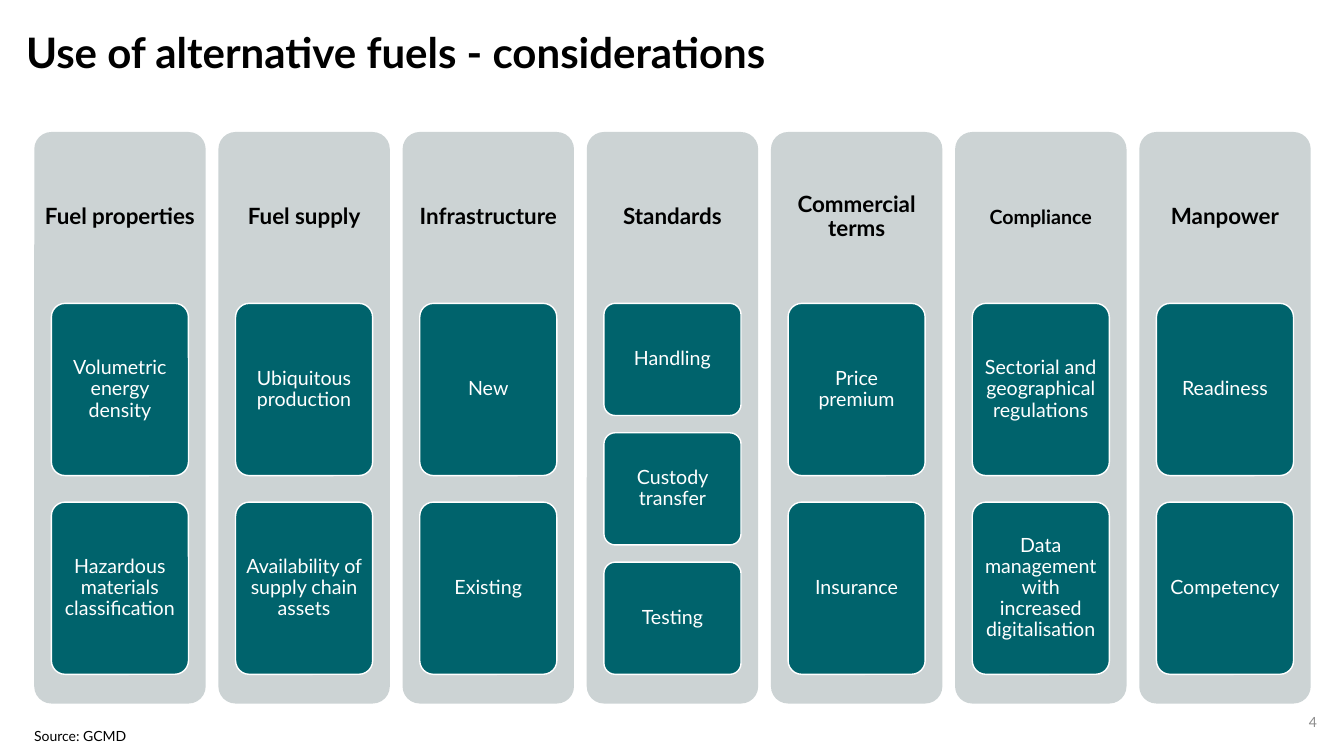
from dataclasses import dataclass

from pptx import Presentation
from pptx import util as u
from pptx.dml.color import RGBColor
from pptx.enum import shapes, text

TITLE = "Use of alternative fuels - considerations"
SOURCE = "Source: GCMD"
PAGE_NUMBER = "4"
COLUMNS = [
    ("Fuel properties", ["Volumetric energy density", "Hazardous materials classification"]),
    ("Fuel supply", ["Ubiquitous production", "Availability of supply chain assets"]),
    ("Infrastructure", ["New", "Existing"]),
    ("Standards", ["Handling", "Custody transfer", "Testing"]),
    ("Commercial terms", ["Price premium", "Insurance"]),
    ("Compliance", ["Sectorial and geographical regulations",
                    "Data management with increased digitalisation"]),
    ("Manpower", ["Readiness", "Competency"]),
]
SMALL_HEADINGS = {"Compliance"}


@dataclass(frozen=True)
class Theme:
    font: str = "Lato"
    ink: str = "000000"
    grey: str = "8C8C8C"
    panel: str = "CCD3D4"
    card: str = "00636C"
    white: str = "FFFFFF"
    title_size: int = 30
    heading_size: int = 16
    card_size: int = 14
    note_size: int = 10


THEME = Theme()

PANEL_LEFT, PANEL_TOP = 0.34, 1.31
PANEL_WIDTH, PANEL_HEIGHT = 1.7, 5.67
LAST_PANEL_LEFT = 11.3
HEADING_HEIGHT = 1.7
CARD_WIDTH = 1.36
CARDS_TOP, CARDS_HEIGHT = 3.01, 3.68
GAP_RATIO = 2 / 13


def write(shape, words, size, color=THEME.ink, bold=False, align=text.PP_ALIGN.LEFT,
          anchor=text.MSO_ANCHOR.MIDDLE, insets=(0.1, 0.05), spacing=0.9, wrap=True):
    frame = shape.text_frame
    frame.word_wrap = wrap
    frame.vertical_anchor = anchor
    frame.margin_left = frame.margin_right = u.Inches(insets[0])
    frame.margin_top = frame.margin_bottom = u.Inches(insets[1])
    para = frame.paragraphs[0]
    para.alignment = align
    para.line_spacing = spacing
    span = para.add_run()
    span.text = words
    span.font.name = THEME.font
    span.font.size = u.Pt(size)
    span.font.bold = bold
    span.font.color.rgb = RGBColor.from_string(color)


def add_box(page, *place):
    return page.shapes.add_textbox(*map(u.Inches, place))


def add_rounded(page, place, fill, outline=None):
    shape = page.shapes.add_shape(shapes.MSO_SHAPE.ROUNDED_RECTANGLE, *map(u.Inches, place))
    shape.adjustments[0] = 0.1
    shape.shadow.inherit = False
    shape.fill.solid()
    shape.fill.fore_color.rgb = RGBColor.from_string(fill)
    if outline:
        shape.line.color.rgb = RGBColor.from_string(outline)
        shape.line.width = u.Pt(1)
    else:
        shape.line.fill.background()
    return shape


def add_column(page, left, heading, cards):
    add_rounded(page, (left, PANEL_TOP, PANEL_WIDTH, PANEL_HEIGHT), THEME.panel)
    size = THEME.card_size if heading in SMALL_HEADINGS else THEME.heading_size
    write(add_box(page, left, PANEL_TOP, PANEL_WIDTH, HEADING_HEIGHT), heading, size,
          bold=True, align=text.PP_ALIGN.CENTER, insets=(0.07, 0.07))
    count = len(cards)
    height = CARDS_HEIGHT / (count + (count - 1) * GAP_RATIO)
    card_left = left + (PANEL_WIDTH - CARD_WIDTH) / 2
    for row, words in enumerate(cards):
        top = CARDS_TOP + row * height * (1 + GAP_RATIO)
        card = add_rounded(page, (card_left, top, CARD_WIDTH, height), THEME.card, THEME.white)
        write(card, words, THEME.card_size, color=THEME.white,
              align=text.PP_ALIGN.CENTER, insets=(0.04, 0.03))


def main():
    deck = Presentation()
    deck.slide_width, deck.slide_height = u.Inches(13.33), u.Inches(7.5)
    page = deck.slides.add_slide(deck.slide_layouts[6])
    write(add_box(page, 0.16, 0.05, 11.5, 0.99), TITLE, THEME.title_size, bold=True)
    write(add_box(page, 10.16, 6.96, 3, 0.4), PAGE_NUMBER, THEME.note_size,
          color=THEME.grey, align=text.PP_ALIGN.RIGHT, spacing=1.0)
    pitch = (LAST_PANEL_LEFT - PANEL_LEFT) / (len(COLUMNS) - 1)
    for index, (heading, cards) in enumerate(COLUMNS):
        add_column(page, PANEL_LEFT + index * pitch, heading, cards)
    write(add_box(page, 0.24, 7.17, 1.15, 0.44), SOURCE, THEME.note_size,
          anchor=text.MSO_ANCHOR.TOP, spacing=1.0, wrap=False)
    deck.save("out.pptx")


if __name__ == "__main__":
    main()
